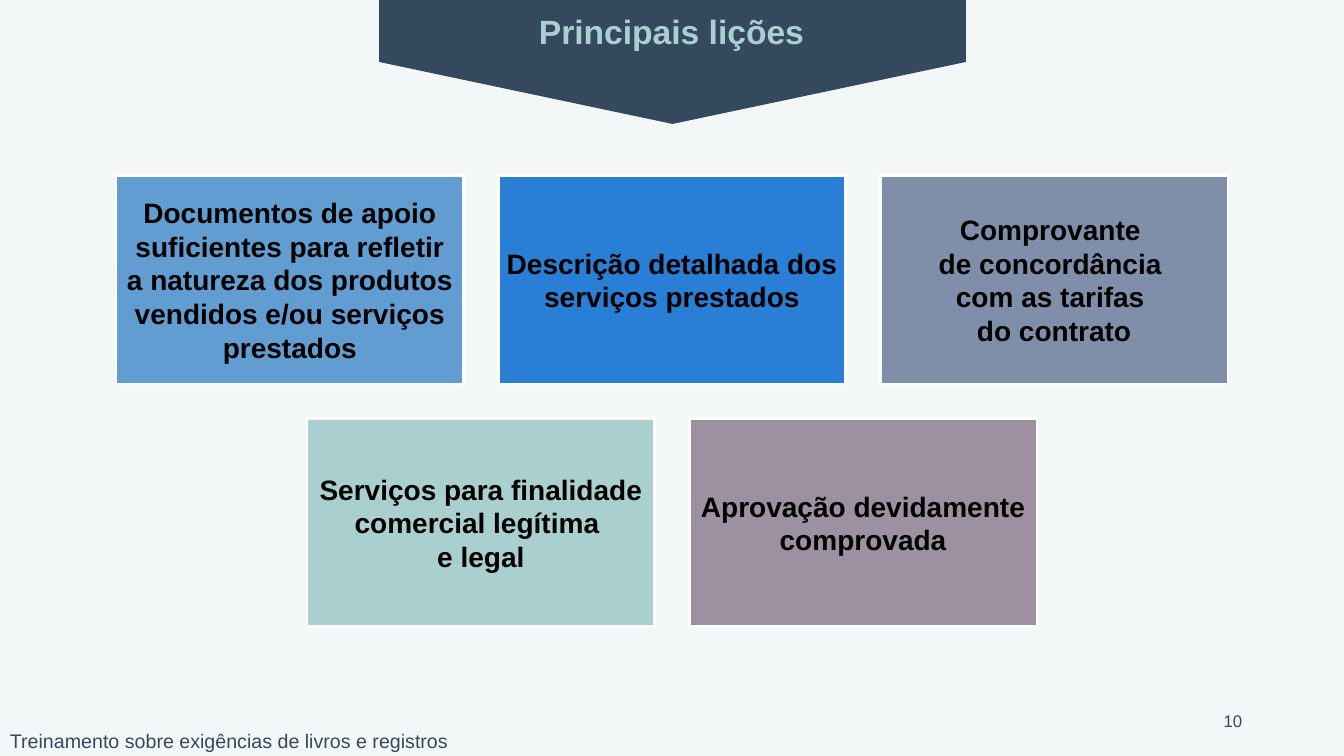
from pptx import Presentation
from pptx import util as u
from pptx.dml.color import RGBColor
from pptx.enum import shapes, text

COLORS = {
    "background": "F4F7F7", "navy": "34495E", "mint": "AACFD0",
    "white": "FFFFFF", "black": "000000",
}
WIDTH, HEIGHT = 13.33, 7.5
CARD_W, CARD_H, GAP = 3.45, 2.07, 0.34
CARDS_TOP = 1.74

# Rows of cards: fill colour and lines of wording
CARD_ROWS = [
    [("629DD1", ["Documentos de apoio suficientes para refletir a natureza "
                 "dos produtos vendidos e/ou serviços prestados"]),
     ("297FD5", ["Descrição detalhada dos serviços prestados"]),
     ("7F8FA9", ["Comprovante ", "de concordância ", "com as tarifas ",
                 "do contrato"])],
    [("AACFCF", ["Serviços para finalidade comercial legítima ", "e legal"]),
     ("9D90A0", ["Aprovação devidamente comprovada"])],
]


class Deck:
    """Style and current slide, with one method per kind of element."""
    font = "Arial"

    def __init__(self):
        self.prs = Presentation()
        self.prs.slide_width = u.Inches(WIDTH)
        self.prs.slide_height = u.Inches(HEIGHT)
        self.s = self.prs.slides.add_slide(self.prs.slide_layouts[5])
        fill = self.s.background.fill
        fill.solid()
        fill.fore_color.rgb = self.color("background")

    def color(self, name):
        return RGBColor.from_string(COLORS.get(name, name))

    def box(self, x, y, w, h):
        """Turn shares of the slide's size into lengths."""
        pw, ph = self.prs.slide_width, self.prs.slide_height
        return [u.Emu(round(n)) for n in (x * pw, y * ph, w * pw, h * ph)]

    def add_text(self, sp, lines, size, color, align, bold=False,
                 anchor=text.MSO_ANCHOR.TOP, inset=(0.1, 0.05)):
        tf = sp.text_frame
        tf.word_wrap = True
        tf.auto_size = text.MSO_AUTO_SIZE.NONE
        tf.vertical_anchor = anchor
        tf.margin_left = tf.margin_right = u.Inches(inset[0])
        tf.margin_top = tf.margin_bottom = u.Inches(inset[1])
        p = tf.paragraphs[0]
        p.alignment = align
        for i, line in enumerate(lines):
            if i:
                p.add_line_break()
            r = p.add_run()
            r.text = line
            r.font.name, r.font.size, r.font.bold = self.font, u.Pt(size), bold
            r.font.color.rgb = self.color(color)

    def shape(self, kind, box, fill, line=None):
        sp = self.s.shapes.add_shape(kind, *box)
        sp.shadow.inherit = False
        sp.fill.solid()
        sp.fill.fore_color.rgb = self.color(fill)
        if line:
            sp.line.color.rgb = self.color(line)
            sp.line.width = u.Pt(2)
        else:
            sp.line.fill.background()
        return sp

    def pennant(self, box, fill):
        """Pentagon that points down and fills the given box."""
        x, y, w, h = box
        turned = (x + (w - h) // 2, y + (h - w) // 2, h, w)
        sp = self.shape(shapes.MSO_SHAPE.PENTAGON, turned, fill)
        sp.rotation = 90

    def title(self, wording, box):
        sp = self.s.shapes.title
        sp.left, sp.top, sp.width, sp.height = box
        self.add_text(sp, [wording], 24, "mint", text.PP_ALIGN.CENTER, bold=True)
        sp.element.getparent().append(sp.element)  # in front of the pennant

    def label(self, wording, box, size, align, anchor=text.MSO_ANCHOR.TOP):
        sp = self.s.shapes.add_textbox(*box)
        self.add_text(sp, [wording], size, "navy", align, anchor=anchor)

    def card(self, row, col, count, fill, lines):
        """Card in a row of the grid; each row is centred on the slide."""
        left = (WIDTH - count * CARD_W - (count - 1) * GAP) / 2
        x = left + col * (CARD_W + GAP)
        y = CARDS_TOP + row * (CARD_H + GAP)
        box = self.box(x / WIDTH, y / HEIGHT, CARD_W / WIDTH, CARD_H / HEIGHT)
        sp = self.shape(shapes.MSO_SHAPE.RECTANGLE, box, fill, "white")
        self.add_text(sp, lines, 20, "black", text.PP_ALIGN.CENTER, bold=True,
                      anchor=text.MSO_ANCHOR.MIDDLE, inset=(0.08, 0.08))


def main():
    deck = Deck()

    # Footer
    deck.label("Treinamento sobre exigências de livros e registros",
               deck.box(0, 7.18 / HEIGHT, 5.22 / WIDTH, 0.36 / HEIGHT),
               14, text.PP_ALIGN.LEFT)

    # Heading on its pennant
    deck.pennant(deck.box(3.76 / WIDTH, 0, 5.82 / WIDTH, 1.23 / HEIGHT), "navy")
    deck.title("Principais lições",
               deck.box(2.97 / WIDTH, 0.06 / HEIGHT, 7.38 / WIDTH, 0.5 / HEIGHT))

    # Page number
    deck.label("10", deck.box(9.42 / WIDTH, 6.95 / HEIGHT, 3 / WIDTH, 0.4 / HEIGHT),
               12, text.PP_ALIGN.RIGHT, text.MSO_ANCHOR.MIDDLE)

    # Lesson cards
    for row, cards in enumerate(CARD_ROWS):
        for col, (fill, lines) in enumerate(cards):
            deck.card(row, col, len(cards), fill, lines)

    deck.prs.save("out.pptx")


if __name__ == "__main__":
    main()
